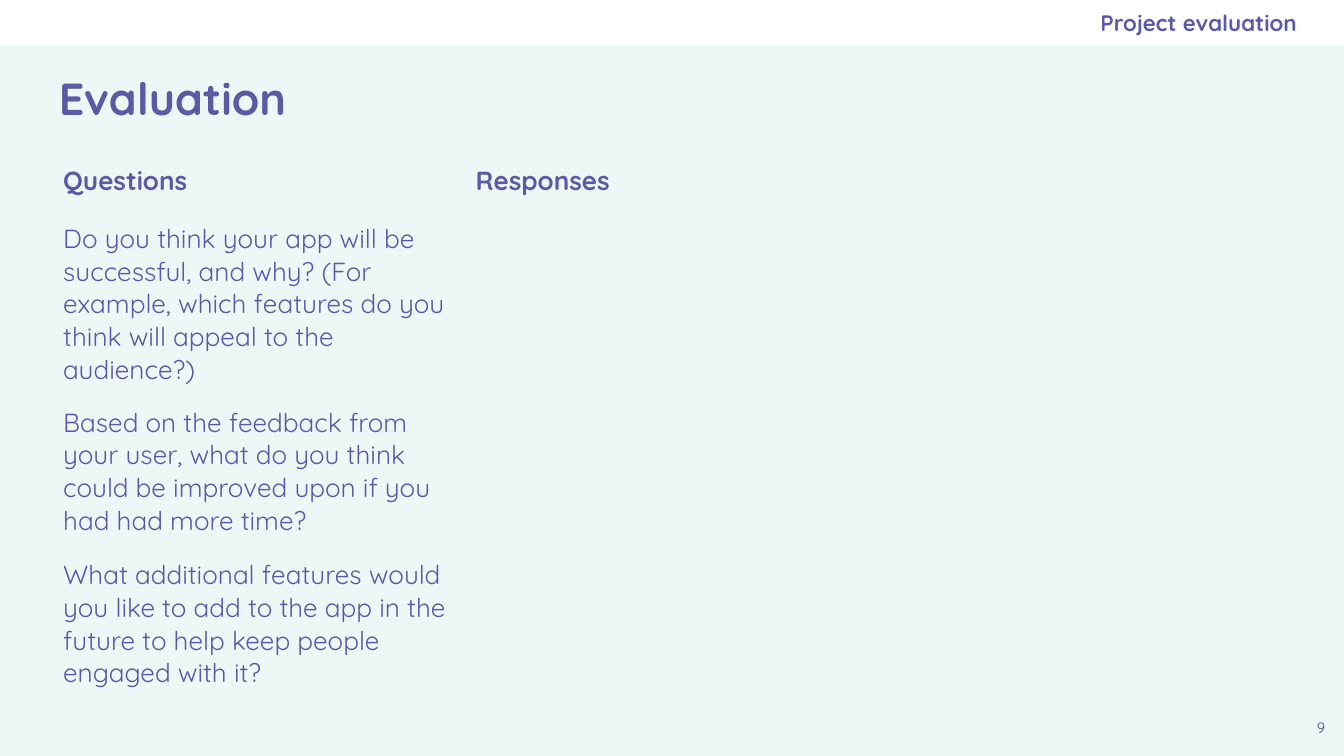
"""Build the project evaluation slide with its question and response table."""
from pptx import Presentation
from pptx.dml.color import RGBColor
from pptx.enum.shapes import MSO_SHAPE as Shape
from pptx.enum.text import MSO_ANCHOR as Anchor, PP_ALIGN as Align
from pptx.oxml.ns import qn
from pptx.util import Inches, Pt

COLORS = {"background": "ECF8F5", "band": "FFFFFF", "text": "5B5BA5", "number": "494985"}
PLAIN_TABLE = "{2D5ABB26-0587-4C30-8999-92F81FD0307C}"
ROWS = [
    ("Questions", "Responses"),
    ("Do you think your app will be successful, and why? (For example, which "
     "features do you think will appeal to the audience?)", ""),
    ("Based on the feedback from your user, what do you think could be improved "
     "upon if you had had more time?", ""),
    ("What additional features would you like to add to the app in the future to "
     "help keep people engaged with it?", ""),
]


def write_text(frame, text, size=14, color="text", bold=False, align=Align.LEFT):
    paragraph = frame.paragraphs[0]
    paragraph.alignment = align
    run = paragraph.add_run()
    run.text = text
    run.font.name = "Quicksand"
    run.font.size = Pt(size)
    run.font.bold = bold
    run.font.color.rgb = RGBColor.from_string(COLORS[color])


class SlideBuilder:
    def __init__(self, presentation):
        self.margin = Inches(0.1)
        self.slide = presentation.slides.add_slide(presentation.slide_layouts[6])
        self.fill(self.slide.background, "background")

    def fill(self, target, color):
        target.fill.solid()
        target.fill.fore_color.rgb = RGBColor.from_string(COLORS[color])

    def set_margins(self, target):
        target.margin_left = target.margin_right = self.margin
        target.margin_top = target.margin_bottom = self.margin

    def band(self, left, top, width, height):
        shape = self.slide.shapes.add_shape(
            Shape.RECTANGLE, Inches(left), Inches(top), Inches(width), Inches(height))
        shape.shadow.inherit = False
        shape.line.fill.background()
        self.fill(shape, "band")

    def text(self, text, left, top, width, height, anchor=Anchor.MIDDLE, **style):
        box = self.slide.shapes.add_textbox(
            Inches(left), Inches(top), Inches(width), Inches(height))
        frame = box.text_frame
        frame.word_wrap = True
        frame.vertical_anchor = anchor
        self.set_margins(frame)
        write_text(frame, text, **style)
        return frame

    def table(self, rows, left, top, size, widths, row_height):
        graphic = self.slide.shapes.add_table(
            len(rows), len(widths), Inches(left), Inches(top), Inches(size), Inches(size))
        for style in graphic.element.iter(qn("a:tableStyleId")):
            style.text = PLAIN_TABLE
        table = graphic.table
        table.first_row = table.horz_banding = False
        for column, width in zip(table.columns, widths):
            column.width = Inches(width)
        for row_index, texts in enumerate(rows):
            table.rows[row_index].height = Inches(row_height)
            for column_index, text in enumerate(texts):
                cell = table.cell(row_index, column_index)
                cell.fill.background()
                self.set_margins(cell)
                if text:
                    write_text(cell.text_frame, text, bold=row_index == 0)
        graphic.width = graphic.height = Inches(size)


def main():
    presentation = Presentation()
    presentation.slide_width = Inches(10)
    presentation.slide_height = Inches(10) * 9 // 16
    builder = SlideBuilder(presentation)
    builder.band(0, 0, 10, 0.34)
    builder.text("Evaluation", 0.34, 0.35, 9.32, 0.76, size=24, bold=True)
    builder.text("9", 9.66, 5.28, 0.34, 0.35, anchor=Anchor.TOP,
                 size=8, color="number", align=Align.CENTER)
    header = builder.text("Project evaluation", 5.75, 0, 3.9, 0.34,
                          size=12, bold=True, align=Align.RIGHT)
    header.margin_right = 0
    builder.table(ROWS, 0.37, 1.12, 3.28, (3.07, 6.13), 0.42)
    presentation.save("out.pptx")


if __name__ == "__main__":
    main()
